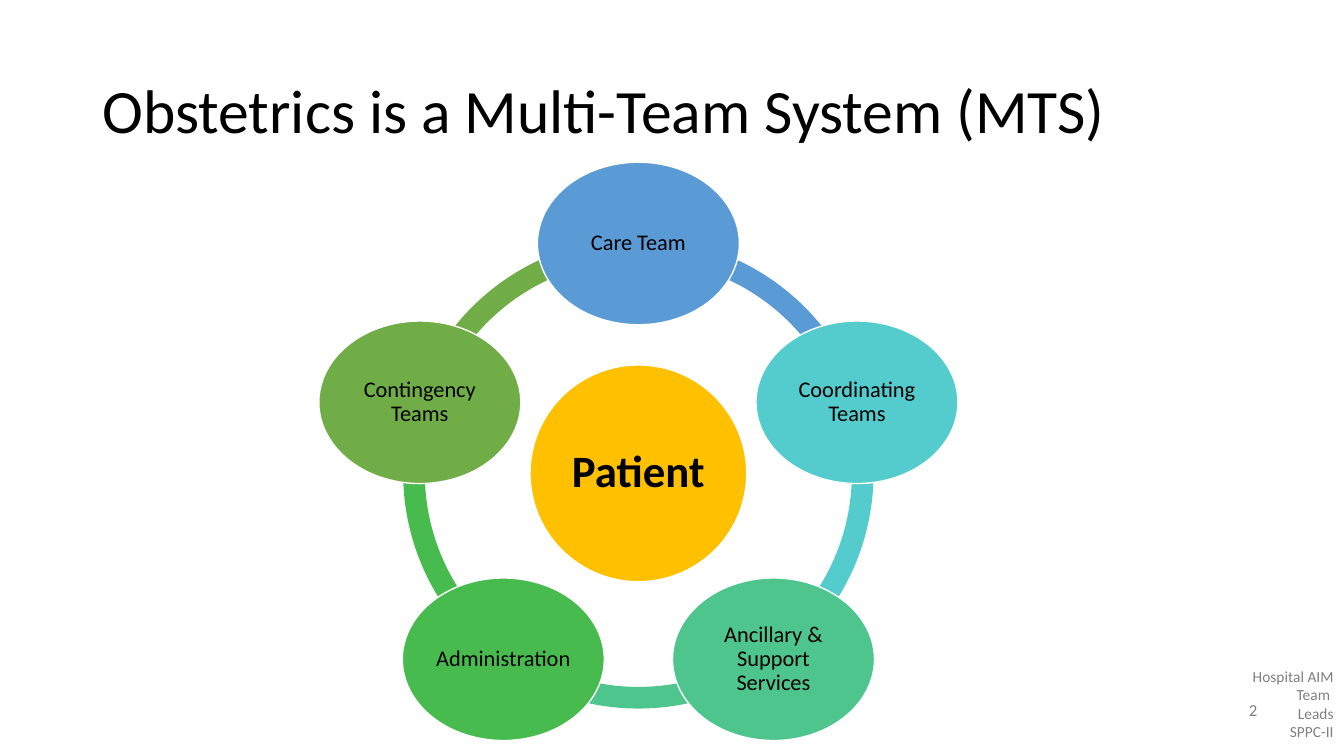
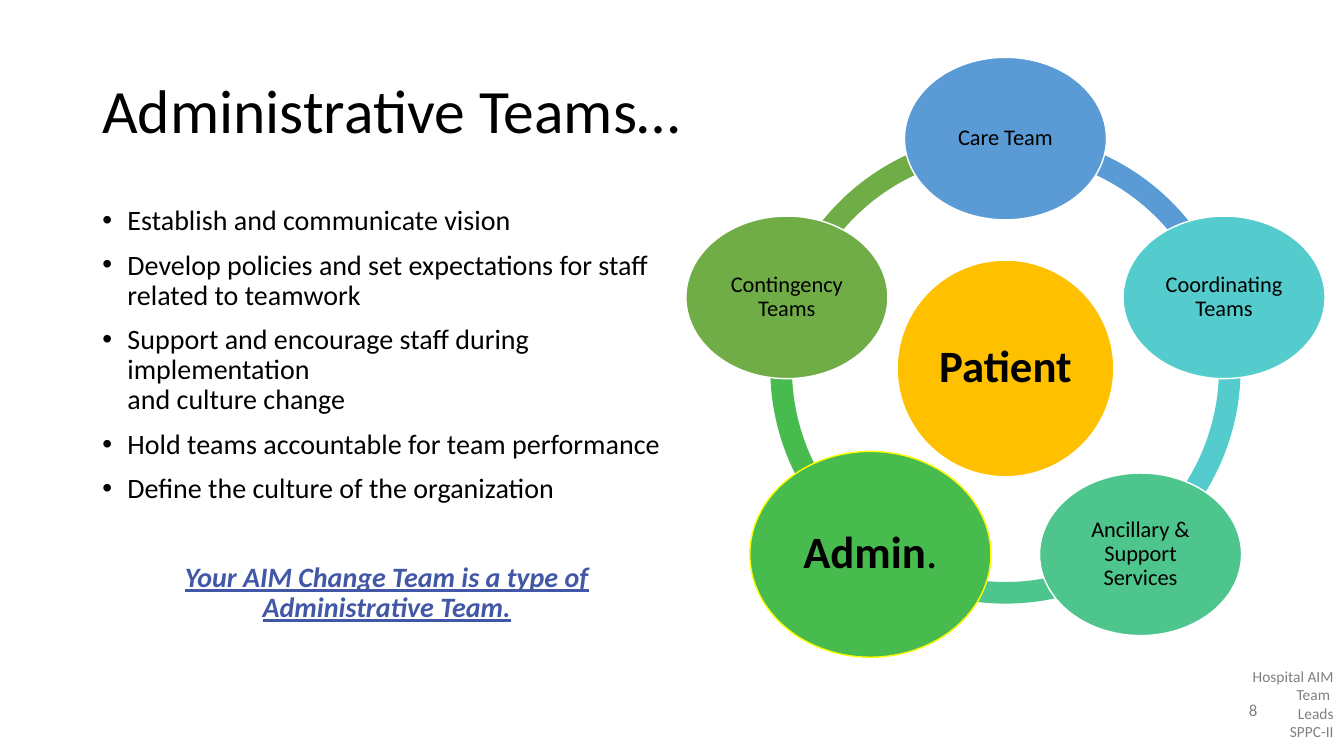
import math

from lxml import etree
from pptx import Presentation
from pptx.dml.color import RGBColor
from pptx.enum.shapes import MSO_SHAPE
from pptx.enum.text import MSO_ANCHOR, PP_ALIGN
from pptx.oxml.ns import qn
from pptx.util import Inches, Pt

ELLIPSE, BLOCK_ARC = MSO_SHAPE.OVAL, MSO_SHAPE.BLOCK_ARC
LEFT, CENTER, RIGHT = PP_ALIGN.LEFT, PP_ALIGN.CENTER, PP_ALIGN.RIGHT
TOP, MIDDLE = MSO_ANCHOR.TOP, MSO_ANCHOR.MIDDLE

FONT = "Calibri"
COLORS = {
    "text": "000000", "footer": "808080", "accent": "4258A6",
    "white": "FFFFFF", "highlight": "FFFF00", "patient": "FFC000",
    "care": "5B9BD5", "coordinating": "54CCCD", "ancillary": "4DC58D",
    "administration": "48BB4F", "contingency": "70AD47",
}

COLUMNS, ROWS = 160, 90
CELL = Inches(1) / 12
RING_SIZE, RING_BAND = 56, 0.046
ORBIT = 27.36
NODE_SIZE, FOCUS_SIZE, PATIENT_SIZE = (24.05, 19.35), (28.7, 24.5), (25.8, 25.8)

TEAMS = [
    ("care", "Care Team"),
    ("coordinating", "Coordinating Teams"),
    ("ancillary", "Ancillary & Support Services"),
    ("administration", "Administration"),
    ("contingency", "Contingency Teams"),
]
STEP = 360 / len(TEAMS)
FOOTER = ["Hospital AIM Team ", "Leads", "SPPC-II"]
DUTIES = [
    "Establish and communicate vision",
    "Develop policies and set expectations for staff related to teamwork",
    "Support and encourage staff during implementation\nand culture change",
    "Hold teams accountable for team performance",
    "Define the culture of the organization",
]
CALLOUT = "Your AIM Change Team is a type of Administrative Team."
PAGES = [
    {"title": "Obstetrics is a Multi-Team System (MTS)", "number": "2",
     "center": (76, 56.35), "focus": None, "duties": []},
    {"title": "Administrative Teams…", "number": "8",
     "center": (119.7, 43.86), "focus": "administration", "duties": DUTIES},
]


def write(box, paragraphs, size, color="text", align=LEFT, anchor=TOP,
          spacing=1.0, inset=None, bullet=False, before=0):
    frame = box.text_frame
    frame.word_wrap = True
    frame.vertical_anchor = anchor
    if inset is not None:
        frame.margin_left = frame.margin_right = Inches(inset)
        frame.margin_top = frame.margin_bottom = Inches(inset)
    for index, spans in enumerate(paragraphs):
        para = frame.add_paragraph() if index else frame.paragraphs[0]
        if bullet:
            properties = para._p.get_or_add_pPr()
            properties.set("marL", str(Inches(0.25)))
            properties.set("indent", str(-Inches(0.25)))
            etree.SubElement(properties, qn("a:buFont")).set("typeface", "Arial")
            etree.SubElement(properties, qn("a:buChar")).set("char", "•")
        para.alignment = align
        para.line_spacing = spacing
        if index:
            para.space_before = Pt(before)
        for text, bold in spans:
            for line_index, line in enumerate(text.split("\n")):
                if line_index:
                    para.add_line_break()
                span = para.add_run()
                span.text = line
                span.font.name = FONT
                span.font.size = Pt(size)
                span.font.bold = bold
                span.font.color.rgb = RGBColor.from_string(COLORS[color])
    return frame


def add_shape(shapes, kind, center, size, fill, line=None):
    left, top = (middle - extent / 2 for middle, extent in zip(center, size))
    shape = shapes.add_shape(kind, *(round(n * CELL) for n in (left, top, *size)))
    shape.shadow.inherit = False
    shape.fill.solid()
    shape.fill.fore_color.rgb = RGBColor.from_string(COLORS[fill])
    if line:
        shape.line.color.rgb = RGBColor.from_string(COLORS[line])
        shape.line.width = Pt(1)
    else:
        shape.line.fill.background()
    return shape


deck = Presentation()
deck.slide_width, deck.slide_height = round(COLUMNS * CELL), round(ROWS * CELL)
blank = deck.slide_layouts[6]

for content in PAGES:
    page = deck.slides.add_slide(blank)
    areas = {
        "footer": (146, 78.8, 13.95, 10.1),
        "title": (11, 4.8, 138, 17.4),
        "number": (146.4, 82.1, 5.6, 4.8),
    }
    if content["duties"]:
        areas["body"] = (11, 24, 70.1, 52.4)
    boxes = {
        name: page.shapes.add_textbox(*(round(n * CELL) for n in area))
        for name, area in areas.items()
    }

    write(boxes["footer"], [[(line, False)] for line in FOOTER], 11, "footer", RIGHT)
    write(boxes["title"], [[(content["title"], False)]], 44, anchor=MIDDLE, spacing=0.9)
    write(boxes["number"], [[(content["number"], False)]], 12, "footer", CENTER, MIDDLE)

    if content["duties"]:
        frame = write(boxes["body"], [[(duty, False)] for duty in content["duties"]],
                      20, spacing=0.9, bullet=True, before=10)
        callout = frame.add_paragraph()
        callout.alignment = CENTER
        callout.line_spacing = 0.9
        callout.space_before = Pt(42)
        span = callout.add_run()
        span.text = CALLOUT
        span.font.name = FONT
        span.font.size = Pt(20)
        span.font.bold = span.font.italic = span.font.underline = True
        span.font.color.rgb = RGBColor.from_string(COLORS["accent"])

    center = content["center"]
    diagram = page.shapes.add_group_shape().shapes
    for index, (team, label) in reversed(list(enumerate(TEAMS))):
        arc = add_shape(diagram, BLOCK_ARC, center, (RING_SIZE, RING_SIZE), team)
        start = (270 + index * STEP) % 360
        arc.adjustments[0] = start * 0.6
        arc.adjustments[1] = (start + STEP) % 360 * 0.6
        arc.adjustments[2] = RING_BAND

    patient = add_shape(diagram, ELLIPSE, center, PATIENT_SIZE, "patient", "white")
    write(patient, [[("Patient", True)]], 32, align=CENTER, anchor=MIDDLE,
          spacing=0.9, inset=0.04)

    for index, (team, label) in enumerate(TEAMS):
        angle = math.radians(index * STEP)
        spot = (center[0] + ORBIT * math.sin(angle), center[1] - ORBIT * math.cos(angle))
        if team == content["focus"]:
            node = add_shape(diagram, ELLIPSE, spot, FOCUS_SIZE, team, "highlight")
            write(node, [[("Admin", True), (".", False)]], 32, align=CENTER,
                  anchor=MIDDLE, spacing=0.9, inset=0.04)
        else:
            node = add_shape(diagram, ELLIPSE, spot, NODE_SIZE, team, "white")
            write(node, [[(label, False)]], 16, align=CENTER, anchor=MIDDLE,
                  spacing=0.9, inset=0.02)

deck.save("out.pptx")
